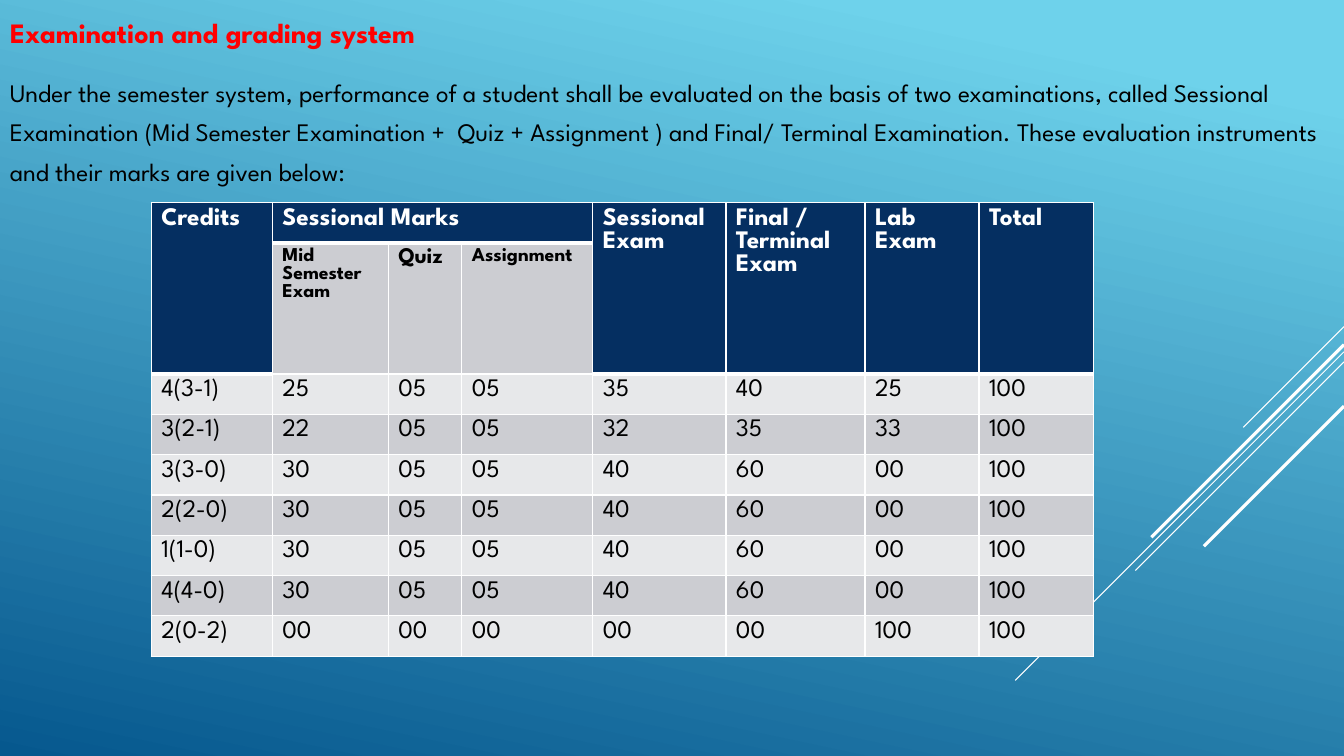
import dataclasses

import lxml.etree
import pptx
import pptx.dml.color
import pptx.enum.shapes
import pptx.enum.text
import pptx.oxml.ns
import pptx.util

Inches = pptx.util.Inches
Pt = pptx.util.Pt
qn = pptx.oxml.ns.qn


@dataclasses.dataclass(frozen=True)
class Theme:
    font: str = "League Spartan"
    sky: str = "6ED2EB"
    deep: str = "06588E"
    white: str = "FFFFFF"
    black: str = "000000"
    red: str = "FF0000"
    navy: str = "052F61"
    band_dark: str = "CCCDD2"
    band_light: str = "E7E8EA"
    title_size: int = 20
    body_size: int = 18
    quiz_size: int = 16
    small_size: int = 14
    line_spacing: float = 1.3
    thin: float = 0.75
    thick: float = 2.25
    border: int = 1
    header_border: int = 3


def rgb(value):
    return pptx.dml.color.RGBColor.from_string(value)


class SlideBuilder:
    def __init__(self, prs, theme):
        self.theme = theme
        self.slide = prs.slides.add_slide(prs.slide_layouts[5])

    def background(self):
        fill = self.slide.background.fill
        fill.gradient()
        fill.gradient_angle = 258
        stops = ((0.1, self.theme.sky), (1, self.theme.deep))
        for stop, (position, color) in zip(fill.gradient_stops, stops):
            stop.position = position
            stop.color.rgb = rgb(color)

    def line(self, start, end, width):
        points = [Inches(v) for v in (*start, *end)]
        sp = self.slide.shapes.add_connector(pptx.enum.shapes.MSO_CONNECTOR.STRAIGHT, *points)
        sp.line.color.rgb = rgb(self.theme.white)
        sp.line.width = Pt(width)
        lxml.etree.SubElement(sp._element.spPr, qn("a:effectLst"))

    def set_text(self, tf, text, size, color, bold=False, spacing=None):
        tf.text = text
        for p in tf.paragraphs:
            p.alignment = pptx.enum.text.PP_ALIGN.LEFT
            p.line_spacing = spacing
            for r in p.runs:
                r.font.name = self.theme.font
                r.font.size = Pt(size)
                r.font.bold = bold
                r.font.color.rgb = rgb(color)

    def place_text(self, sp, box, text, size, color, bold=False):
        sp.left, sp.top, sp.width, sp.height = (Inches(v) for v in box)
        tf = sp.text_frame
        tf.word_wrap = True
        tf.auto_size = pptx.enum.text.MSO_AUTO_SIZE.NONE
        tf.vertical_anchor = pptx.enum.text.MSO_ANCHOR.TOP
        self.set_text(tf, text, size, color, bold, self.theme.line_spacing)

    def title(self, box, text):
        self.place_text(self.slide.shapes.title, box, text,
                        self.theme.title_size, self.theme.red, True)

    def body(self, box, text):
        sp = self.slide.shapes.add_textbox(*(Inches(v) for v in box))
        self.place_text(sp, box, text, self.theme.body_size, self.theme.black)

    def borders(self, cell, top, bottom):
        tc_pr = cell._tc.get_or_add_tcPr()
        thin = self.theme.border
        sides = (("a:lnL", thin), ("a:lnR", thin), ("a:lnT", top), ("a:lnB", bottom))
        for i, (tag, width) in enumerate(sides):
            ln = lxml.etree.Element(qn(tag), w=str(int(Pt(width))))
            fill = lxml.etree.SubElement(ln, qn("a:solidFill"))
            lxml.etree.SubElement(fill, qn("a:srgbClr"), val=self.theme.white)
            tc_pr.insert(i, ln)

    def marks_table(self, left, top, widths, heights, rows, merges, is_header, sub_sizes):
        th = self.theme
        frame = self.slide.shapes.add_table(
            len(rows), len(widths), Inches(left), Inches(top),
            Inches(sum(widths)), Inches(sum(heights)))
        table = frame.table
        for column, width in zip(table.columns, widths):
            column.width = Inches(width)
        for row, height in zip(table.rows, heights):
            row.height = Inches(height)
        for first, last in merges:
            table.cell(*first).merge(table.cell(*last))
        for r, row in enumerate(rows):
            for c, text in enumerate(row):
                cell = table.cell(r, c)
                header = is_header(r, c)
                band = th.band_dark if r % 2 else th.band_light
                cell.fill.solid()
                cell.fill.fore_color.rgb = rgb(th.navy if header else band)
                below_header = not header and is_header(r - 1, c)
                header_end = header and not is_header(r + 1, c)
                self.borders(cell,
                             th.header_border if below_header else th.border,
                             th.header_border if header_end else th.border)
                if text:
                    size = sub_sizes.get(c, th.body_size) if r == 1 else th.body_size
                    self.set_text(cell.text_frame, text, size,
                                  th.white if header else th.black, r < 2)


SESSIONAL_COLUMNS = (1, 2, 3)
INTRO = (
    "Under the semester system, performance of a student shall be evaluated on the basis "
    "of two examinations, called Sessional Examination (Mid Semester Examination +  Quiz + "
    "Assignment ) and Final/ Terminal Examination. These evaluation instruments and their "
    "marks are given below:"
)
MARKS = [
    ["Credits", "Sessional Marks", "", "", "Sessional Exam", "Final /\nTerminal Exam",
     "Lab Exam", "Total"],
    ["", "Mid Semester\nExam", "Quiz", "Assignment", "", "", "", ""],
    ["4(3-1)", "25", "05", "05", "35", "40", "25", "100"],
    ["3(2-1)", "22", "05", "05", "32", "35", "33", "100"],
    ["3(3-0)", "30", "05", "05", "40", "60", "00", "100"],
    ["2(2-0)", "30", "05", "05", "40", "60", "00", "100"],
    ["1(1-0)", "30", "05", "05", "40", "60", "00", "100"],
    ["4(4-0)", "30", "05", "05", "40", "60", "00", "100"],
    ["2(0-2)", "00", "00", "00", "00", "00", "100", "100"],
]


def is_header(row, col):
    return row == 0 or (row == 1 and col not in SESSIONAL_COLUMNS)


def main():
    prs = pptx.Presentation()
    prs.slide_width = Inches(13.33)
    prs.slide_height = Inches(7.5)
    theme = Theme()
    s = SlideBuilder(prs, theme)
    s.background()

    diagonals = [
        (3.24, 1, theme.thin),
        (3.49, 3.26, theme.thin),
        (3.59, 2.07, theme.thin),
        (3.42, 1.91, theme.thick),
        (4.03, 1.39, theme.thick),
    ]
    for y, run, width in diagonals:
        s.line((13.33, y), (13.33 - run, y + run), width)

    s.title((0, 0, 13.33, 0.5), "Examination and grading system")
    s.body((0, 0.63, 13.33, 1.32), INTRO)

    merges = [((0, c), (1, c)) for c in range(8) if c not in SESSIONAL_COLUMNS]
    merges.append(((0, SESSIONAL_COLUMNS[0]), (0, SESSIONAL_COLUMNS[-1])))
    s.marks_table(
        1.5, 2.01,
        widths=[1.2, 1.15, 0.73, 1.3, 1.32, 1.38, 1.13, 1.14],
        heights=[0.4, 1.3] + [0.4] * 7,
        rows=MARKS, merges=merges, is_header=is_header,
        sub_sizes={1: theme.small_size, 2: theme.quiz_size, 3: theme.small_size},
    )
    prs.save("out.pptx")


if __name__ == "__main__":
    main()
